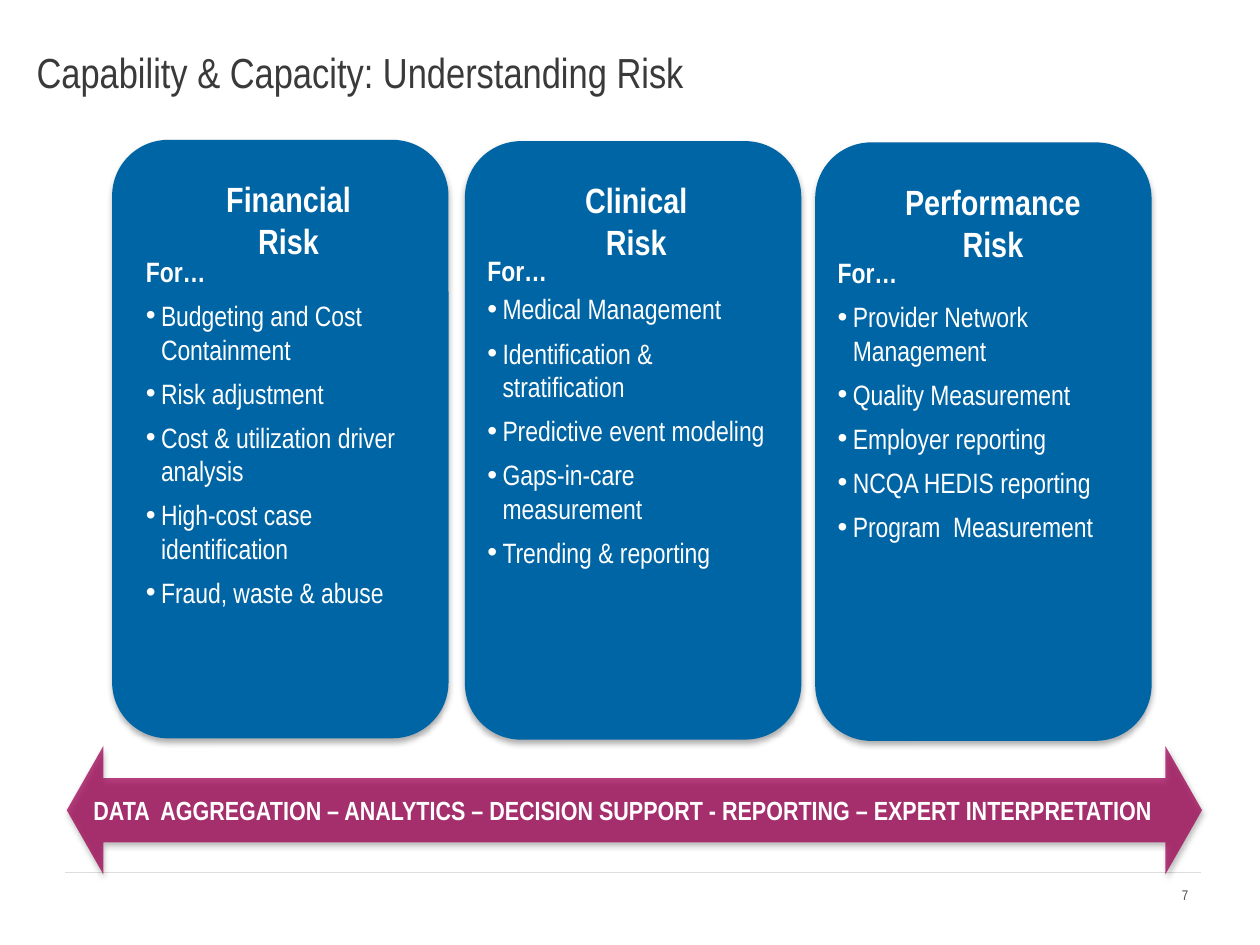
from pptx import Presentation as Deck
from pptx.dml.color import RGBColor as Color
from pptx.enum.shapes import MSO_CONNECTOR as Link, MSO_SHAPE as Shape
from pptx.enum.text import MSO_ANCHOR as Anchor, PP_ALIGN as Align
from pptx.oxml.ns import qn
from pptx.util import Inches, Pt
from lxml.etree import SubElement as Sub

BLUE = Color(0x00, 0x65, 0xA4)
PLUM = Color(0x9E, 0x00, 0x52)
WHITE = Color(0xFF, 0xFF, 0xFF)
DARK = Color(0x3A, 0x3A, 0x3A)
GRAY = Color(0x4D, 0x4D, 0x4D)
PALE = Color(0xDD, 0xDD, 0xDD)


class Page:
    font = "Arial Narrow"

    def __init__(self, deck):
        self.slide = deck.slides.add_slide(deck.slide_layouts[6])

    def style(self, para, size, color, bold=False):
        font = para.font
        font.name, font.size, font.bold = self.font, Pt(size), bold
        font.color.rgb = color

    def frame(self, box, wrap=True):
        frame = self.slide.shapes.add_textbox(*map(Inches, box)).text_frame
        frame.word_wrap = wrap
        return frame

    def text(self, box, words, size, color, bold=False, align=Align.LEFT, wrap=True):
        frame = self.frame(box, wrap)
        para = frame.paragraphs[0]
        para.text, para.alignment = words, align
        self.style(para, size, color, bold)
        return frame

    def list(self, box, head, items, after):
        frame = self.frame(box)
        para = frame.paragraphs[0]
        para.text, para.space_after = head, Pt(after)
        self.style(para, 16, WHITE, True)
        for item in items:
            para = frame.add_paragraph()
            para.text = item
            para.space_before = para.space_after = Pt(3)
            props = para._p.get_or_add_pPr()
            props.set("marL", str(Inches(0.12)))
            props.set("indent", str(-Inches(0.12)))
            Sub(props, qn("a:buFont"), typeface="Arial")
            Sub(props, qn("a:buChar"), char="•")
            self.style(para, 16, WHITE)

    def shape(self, kind, box, color, shade):
        shape = self.slide.shapes.add_shape(kind, *map(Inches, box))
        shape.fill.solid()
        shape.fill.fore_color.rgb = color
        shape.line.fill.background()
        shape.shadow.inherit = False
        blur, drop, alpha = shade
        glow = Sub(shape._element.spPr.find(qn("a:effectLst")), qn("a:outerShdw"),
                   blurRad=str(Pt(blur)), dist=str(Pt(drop)), dir="5400000", rotWithShape="0")
        self.fade(Sub(glow, qn("a:srgbClr"), val="000000"), alpha)
        return shape

    def fade(self, color, alpha):
        Sub(color, qn("a:alpha"), val=str(alpha * 1000))

    def rule(self, left, right, top):
        line = self.slide.shapes.add_connector(
            Link.STRAIGHT, *map(Inches, (left, top, right, top)))
        line.line.color.rgb = PALE
        line.line.width = Pt(0.25)
        Sub(line._element.spPr, qn("a:effectLst"))

    def card(self, left, top, title, span, box, after, items):
        self.shape(Shape.ROUNDED_RECTANGLE, (left, top, 2.67, 4.75), BLUE, (3.5, 2.2, 32))
        self.list(box, "For…", items, after)
        start, width = span
        self.text((start, top + 0.25, width, 0.77), title, 20, WHITE, True, Align.CENTER, False)

    def arrow(self, box, color):
        shape = self.shape(Shape.LEFT_RIGHT_ARROW, box, color, (3.1, 1.8, 35))
        shape.adjustments[0], shape.adjustments[1] = 0.5, 0.285
        self.fade(next(shape._element.spPr.iter(qn("a:srgbClr"))), 75)


CARDS = [
    (0.89, 1.11, "Financial\nRisk", (1.58, 1.42), (1.06, 1.97, 2.33, 3.53), 3,
     ["Budgeting and Cost Containment", "Risk adjustment",
      "Cost & utilization driver analysis", "High-cost case identification",
      "Fraud, waste & abuse"]),
    (3.69, 1.12, "Clinical\nRisk", (4.45, 1.2), (3.77, 1.96, 2.5, 2.68), 0,
     ["Medical Management", "Identification & stratification",
      "Predictive event modeling", "Gaps-in-care measurement",
      "Trending & reporting"]),
    (6.47, 1.13, "Performance\nRisk", (6.92, 1.92), (6.55, 1.98, 2.5, 2.41), 3,
     ["Provider Network Management", "Quality Measurement",
      "Employer reporting", "NCQA HEDIS reporting", "Program  Measurement"]),
]


def main():
    deck = Deck()
    deck.slide_width, deck.slide_height = Inches(10), Inches(7.5)
    page = Page(deck)
    page.rule(0.52, 9.53, 6.92)
    page.text((7.2, 6.99, 2.33, 0.35), "7", 8, GRAY, align=Align.RIGHT)
    for card in CARDS:
        page.card(*card)
    title = page.text((0.29, 0.26, 6.34, 0.51),
                      "Capability & Capacity: Understanding Risk", 24, DARK)
    title.vertical_anchor = Anchor.BOTTOM
    title.margin_left = title.margin_right = title.margin_top = title.margin_bottom = 0
    page.arrow((0.53, 5.92, 9.01, 1.02), PLUM)
    band = page.text((0.47, 6.23, 8.95, 0.38),
                     "DATA  AGGREGATION – ANALYTICS – DECISION SUPPORT - REPORTING – "
                     "EXPERT INTERPRETATION", 15, WHITE, True, Align.CENTER)
    band.vertical_anchor = Anchor.MIDDLE
    band.paragraphs[0].line_spacing = 1.1
    deck.save("out.pptx")


if __name__ == "__main__":
    main()
